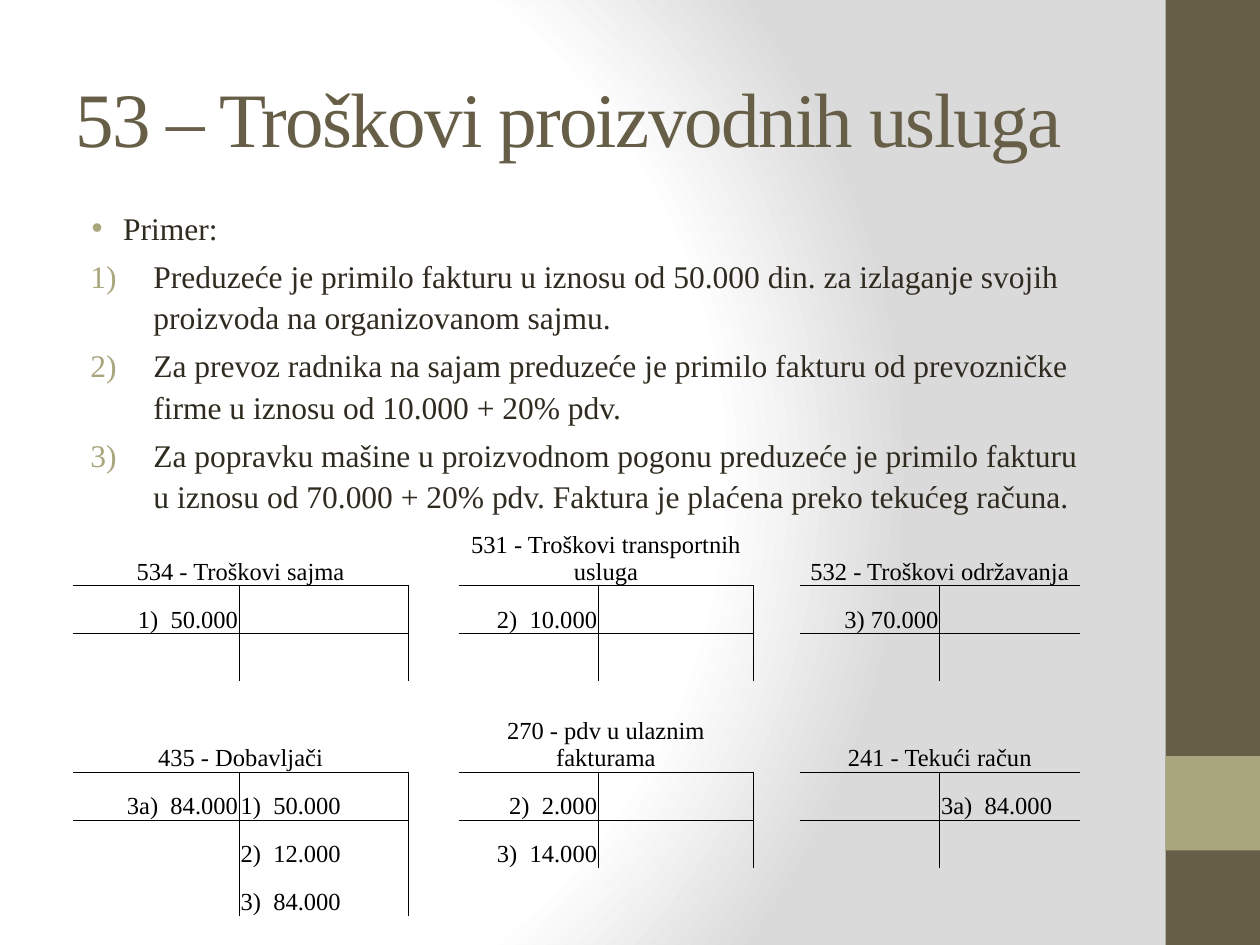
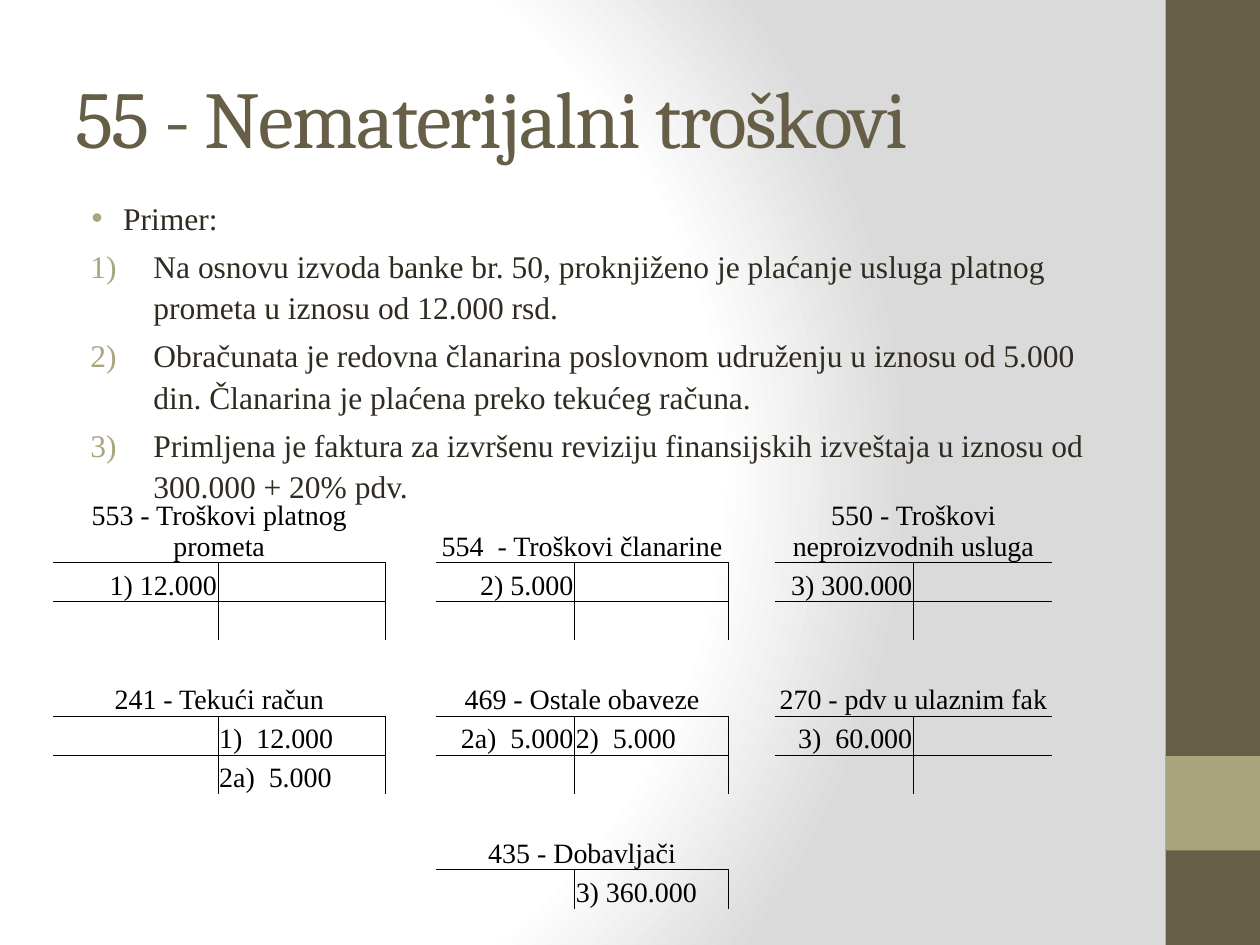
from lxml import etree
from pptx import Presentation
from pptx.dml.color import RGBColor
from pptx.enum.shapes import MSO_SHAPE
from pptx.enum.text import MSO_ANCHOR, PP_ALIGN
from pptx.oxml import parse_xml
from pptx.oxml.ns import qn
from pptx.util import Inches, Pt

RECT = MSO_SHAPE.RECTANGLE
MIDDLE, BOTTOM = MSO_ANCHOR.MIDDLE, MSO_ANCHOR.BOTTOM
LEFT, CENTER, RIGHT = PP_ALIGN.LEFT, PP_ALIGN.CENTER, PP_ALIGN.RIGHT

BROWN, OLIVE, INK, BLACK = "675E47", "A9A57C", "2F2B20", "000000"
SERIF = "Times New Roman"
NO_GRID_STYLE = "{2D5ABB26-0587-4C30-8999-92F81FD0307C}"
BACKDROP = """
<a:gradFill xmlns:a="http://schemas.openxmlformats.org/drawingml/2006/main" rotWithShape="1">
  <a:gsLst>
    <a:gs pos="0"><a:srgbClr val="FFFFFF"/></a:gs>
    <a:gs pos="75000"><a:srgbClr val="FFFFFF"/></a:gs>
    <a:gs pos="100000"><a:srgbClr val="DADADA"/></a:gs>
  </a:gsLst>
  <a:path path="circle">
    <a:fillToRect l="20000" t="50000" r="100000" b="50000"/>
  </a:path>
</a:gradFill>"""


def rgb(hex_color):
    return RGBColor.from_string(hex_color)


def sub(parent, tag, **attrs):
    return etree.SubElement(parent, qn(tag), attrs)


def add_bullet(p, numbered):
    """Give a paragraph a hanging indent and an olive dot or number."""
    left, hang = (0.62, 0.5) if numbered else (0.38, 0.25)
    pPr = p._p.get_or_add_pPr()
    pPr.set("marL", str(Inches(left)))
    pPr.set("indent", str(-Inches(hang)))
    sub(sub(pPr, "a:buClr"), "a:srgbClr", val=OLIVE)
    if numbered:
        sub(pPr, "a:buFont", typeface="+mj-lt")
        sub(pPr, "a:buAutoNum", type="arabicParenR")
    else:
        sub(pPr, "a:buFont", typeface="Arial")
        sub(pPr, "a:buChar", char="•")


def add_borders(cell, sides):
    """Draw thin black lines on the given sides, a string of L, R, T, B in that order."""
    tcPr = cell._tc.get_or_add_tcPr()
    for side in sides:
        ln = sub(tcPr, "a:ln" + side, w=str(Pt(0.5)))
        sub(sub(ln, "a:solidFill"), "a:srgbClr", val=BLACK)


class Deck:
    def __init__(self):
        self.prs = Presentation()
        self.prs.slide_width, self.prs.slide_height = Inches(10), Inches(7.5)
        fill = self.prs.slide_master.background.fill
        fill.solid()
        bgPr = self.prs.slide_master.element.find(".//" + qn("p:bgPr"))
        bgPr.replace(bgPr[0], parse_xml(BACKDROP))
        self.s = None

    def new_slide(self):
        self.s = self.prs.slides.add_slide(self.prs.slide_layouts[6])
        self.band(0, 7.5, BROWN)
        self.band(6, 0.75, OLIVE)

    def band(self, top, height, color):
        sp = self.s.shapes.add_shape(RECT, Inches(9.25), Inches(top), Inches(0.75), Inches(height))
        sp.shadow.inherit = False
        sp.fill.solid()
        sp.fill.fore_color.rgb = rgb(color)
        sp.line.fill.background()

    def run(self, p, text, size, color, font=SERIF):
        r = p.add_run()
        r.text = text
        r.font.size, r.font.name = Pt(size), font
        r.font.color.rgb = rgb(color)
        return r

    def text_frame(self, top, height):
        tf = self.s.shapes.add_textbox(Inches(0.5), Inches(top), Inches(8.33), Inches(height)).text_frame
        tf.word_wrap = True
        return tf

    def title(self, text, size, font):
        tf = self.text_frame(0.3, 1.25)
        tf.vertical_anchor = MIDDLE
        r = self.run(tf.paragraphs[0], text, size, BROWN, font)
        r.font._element.set("spc", "-100")

    def example(self, top, entries):
        """Write the "Primer:" line and the numbered entries under it."""
        tf = self.text_frame(top, 7 - top)
        for i, text in enumerate(["Primer:", *entries]):
            p = tf.add_paragraph() if i else tf.paragraphs[0]
            p.line_spacing, p.space_before = 1.1, Pt(3.6)
            add_bullet(p, numbered=i > 0)
            self.run(p, text, 18, INK)

    def cell_text(self, cell, text, size, align):
        p = cell.text_frame.paragraphs[0]
        p.alignment = align
        self.run(p, text, size, BLACK)

    def ledger(self, left, top, cols, rows, size, accounts):
        """Lay T accounts on one grid: (row, column, depth, name, debits, credits)."""
        table = self.s.shapes.add_table(len(rows), len(cols), Inches(left), Inches(top),
                                        Inches(sum(cols)), Inches(sum(rows))).table
        table.first_row = table.horz_banding = False
        table._tbl.tblPr.find(qn("a:tableStyleId")).text = NO_GRID_STYLE
        for column, width in zip(table.columns, cols):
            column.width = Inches(width)
        for row, height in zip(table.rows, rows):
            row.height = Inches(height)

        for row, col, depth, name, debits, credits in accounts:
            head, tail = table.cell(row, col), table.cell(row, col + 1)
            head.merge(tail)
            self.cell_text(head, name, size, CENTER)
            add_borders(head, "B")
            add_borders(tail, "B")
            for side, amounts, align, inner in ((0, debits, RIGHT, "R"), (1, credits, LEFT, "L")):
                for i in range(depth):
                    cell = table.cell(row + 1 + i, col + side)
                    add_borders(cell, inner if i else inner + "T")
                    if i < len(amounts):
                        self.cell_text(cell, amounts[i], size, align)

        for cell in table.iter_cells():
            cell.fill.background()
            cell.vertical_anchor = BOTTOM
            cell.margin_left = cell.margin_right = cell.margin_top = Inches(0.01)
            cell.margin_bottom = 0
            p = cell.text_frame.paragraphs[0]
            if not p.runs:
                sub(p._p, "a:endParaRPr", sz=str(size * 100))


def main():
    deck = Deck()

    deck.new_slide()
    deck.title("53 – Troškovi proizvodnih usluga", 44, SERIF)
    deck.example(1.58, [
        "Preduzeće je primilo fakturu u iznosu od 50.000 din. za izlaganje svojih "
        "proizvoda na organizovanom sajmu.",
        "Za prevoz radnika na sajam preduzeće je primilo fakturu od prevozničke "
        "firme u iznosu od 10.000 + 20% pdv.",
        "Za popravku mašine u proizvodnom pogonu preduzeće je primilo fakturu "
        "u iznosu od 70.000 + 20% pdv. Faktura je plaćena preko tekućeg računa.",
    ])
    deck.ledger(
        0.58, 4.17, [1.32, 1.34, 0.4, 1.11, 1.23, 0.37, 1.11, 1.11],
        [0.35, 0.38, 0.38, 0.18] + [0.38] * 4, 14, [
            (0, 0, 2, "534 - Troškovi sajma", ["1)  50.000"], []),
            (0, 3, 2, "531 - Troškovi transportnih usluga", ["2)  10.000"], []),
            (0, 6, 2, "532 - Troškovi održavanja", ["3) 70.000"], []),
            (4, 0, 3, "435 - Dobavljači", ["3a)  84.000"],
             ["1)  50.000", "2)  12.000", "3)  84.000"]),
            (4, 3, 2, "270 - pdv u ulaznim fakturama", ["2)  2.000", "3)  14.000"], []),
            (4, 6, 2, "241 - Tekući račun", [], ["3a)  84.000"]),
        ])

    deck.new_slide()
    deck.title("55 - Nematerijalni troškovi", 46, "Cambria")
    deck.example(1.5, [
        "Na osnovu izvoda banke br. 50, proknjiženo je plaćanje usluga platnog "
        "prometa u iznosu od 12.000 rsd.",
        "Obračunata je redovna članarina poslovnom udruženju u iznosu od 5.000 "
        "din. Članarina je plaćena preko tekućeg računa.",
        "Primljena je faktura za izvršenu reviziju finansijskih izveštaja u iznosu od "
        "300.000 + 20% pdv.",
    ])
    deck.ledger(
        0.42, 3.92, [1.31, 1.33, 0.4, 1.1, 1.22, 0.37, 1.1, 1.1],
        [0.34, 0.31, 0.31] + [0.29, 0.31, 0.31, 0.31] + [0.29, 0.31, 0.31], 16, [
            (0, 0, 2, "553 - Troškovi platnog prometa", ["1) 12.000"], []),
            (0, 3, 2, "554  - Troškovi članarine", ["2) 5.000"], []),
            (0, 6, 2, "550 - Troškovi neproizvodnih usluga", ["3) 300.000"], []),
            (4, 0, 2, "241 - Tekući račun", [], ["1)  12.000", "2a)  5.000"]),
            (4, 3, 2, "469 - Ostale obaveze", ["2a)  5.000"], ["2)  5.000"]),
            (4, 6, 2, "270 - pdv u ulaznim fak", ["3)  60.000"], []),
            (8, 3, 1, "435 - Dobavljači", [], ["3) 360.000"]),
        ])

    deck.prs.save("out.pptx")


if __name__ == "__main__":
    main()
